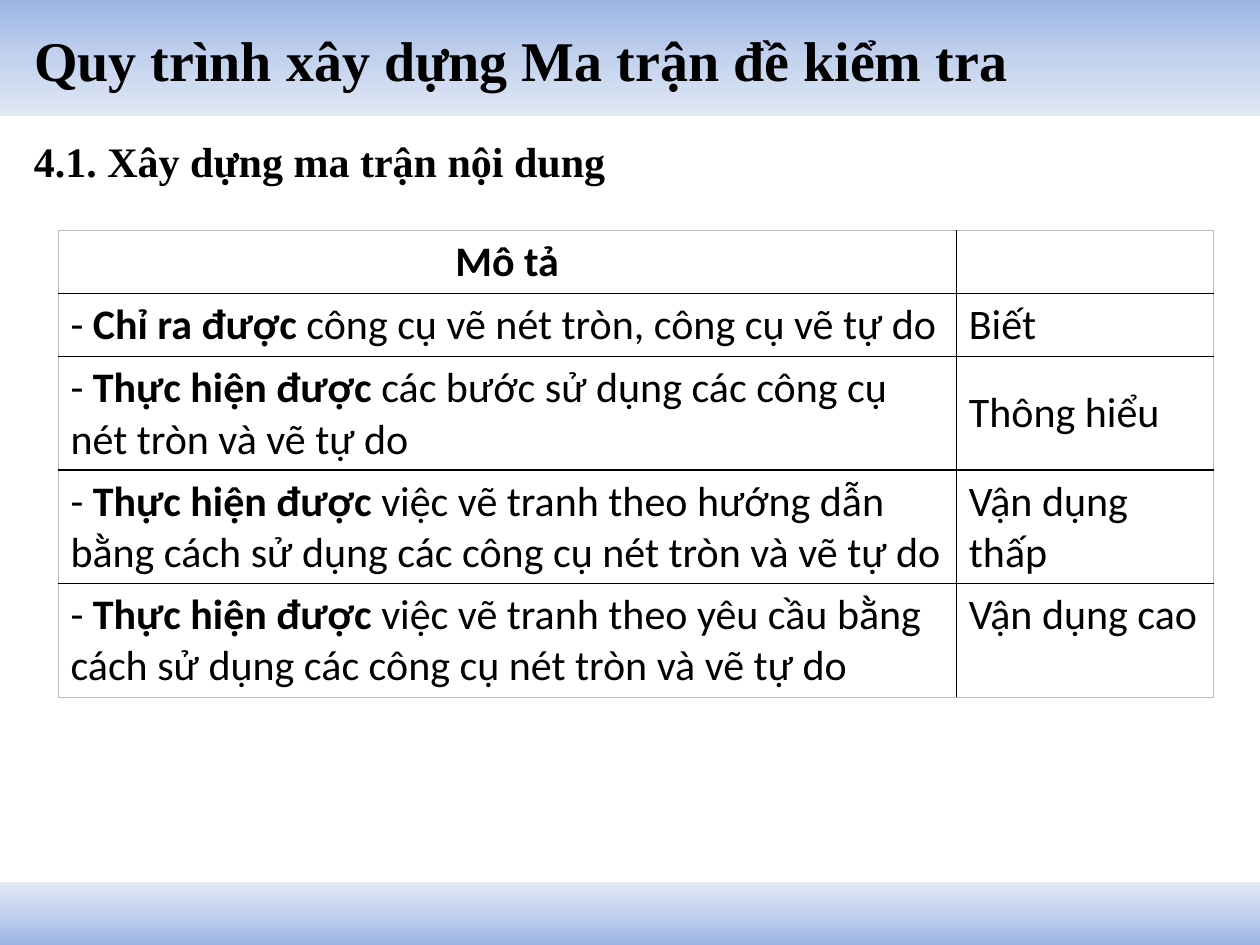
"""Build a slide with the content matrix of a test."""
import copy
import pptx
import pptx.dml.color
import pptx.enum.shapes
import pptx.enum.text
import pptx.oxml
import pptx.oxml.ns
import pptx.util

Inches, Pt = pptx.util.Inches, pptx.util.Pt
RGB = pptx.dml.color.RGBColor.from_string
Align, Anchor = pptx.enum.text.PP_ALIGN, pptx.enum.text.MSO_ANCHOR

THEME = {
    "ink": "000000",
    "edge": "BBBBBB",
    "fade": ["9AB5E4", "C2D1ED", "E1E8F5"],
    "title": {"name": "Times New Roman", "size": Pt(32), "bold": True},
    "head": {"name": "Times New Roman", "size": Pt(24), "bold": True},
    "cell": {"name": "Calibri", "size": Pt(24), "bold": False},
}


def write(para, text, style, **extra):
    run = para.add_run()
    run.text = text
    for key, value in {**THEME[style], **extra}.items():
        setattr(run.font, key, value)
    run.font.color.rgb = RGB(THEME["ink"])


def border(cell, side, color, width):
    cell._tc.get_or_add_tcPr().append(pptx.oxml.parse_xml(
        f'<a:ln{side} {pptx.oxml.ns.nsdecls("a")} w="{Pt(width)}"><a:solidFill>'
        f'<a:srgbClr val="{color}"/></a:solidFill></a:ln{side}>'))


deck = pptx.Presentation()
deck.slide_width, deck.slide_height = Inches(10), Inches(7.5)
slide = deck.slides.add_slide(deck.slide_layouts[5])
shapes = slide.shapes

for top, height, angle in [(0, 0.92, 270), (7, 0.5, 90)]:
    band = shapes.add_shape(pptx.enum.shapes.MSO_SHAPE.RECTANGLE,
                            0, Inches(top), Inches(10), Inches(height))
    band.shadow.inherit = False
    band.line.fill.background()
    band.fill.gradient()
    band.fill.gradient_angle = angle
    first = band._element.spPr.find(".//" + pptx.oxml.ns.qn("a:gs"))
    first.addnext(copy.deepcopy(first))
    for i, stop in enumerate(band.fill.gradient_stops):
        stop.position = i / 2
        stop.color.rgb = RGB(THEME["fade"][i])

title = shapes.title
place = {"left": 0.17, "top": 0.02, "width": 9.67, "height": 0.9}
for key, value in place.items():
    setattr(title, key, Inches(value))
title.text_frame.vertical_anchor = Anchor.MIDDLE
title.text_frame.paragraphs[0].alignment = Align.LEFT
write(title.text_frame.paragraphs[0], "Quy trình xây dựng Ma trận đề kiểm tra", "title")
shapes._spTree.append(title._element)

head = shapes.add_textbox(Inches(0.17), Inches(1.03), Inches(9.75), Inches(0.5))
head.text_frame.word_wrap = True
write(head.text_frame.paragraphs[0], "4.1. Xây dựng ma trận nội dung", "head")

ROWS = [
    ("Chỉ ra được ", "công cụ vẽ nét tròn, công cụ vẽ tự do", "Biết"),
    ("Thực hiện được ", "các bước sử dụng các công cụ nét tròn và vẽ tự do",
     "Thông hiểu"),
    ("Thực hiện được ", "việc vẽ tranh theo hướng dẫn bằng cách sử dụng "
     "các công cụ nét tròn và vẽ tự do", "Vận dụng thấp"),
    ("Thực hiện được ", "việc vẽ tranh theo yêu cầu bằng cách sử dụng "
     "các công cụ nét tròn và vẽ tự do", "Vận dụng cao"),
]
WIDE, HIGH = [7.13, 2.04], [0.5, 0.5, 0.9, 0.9, 0.9]
table = shapes.add_table(len(HIGH), len(WIDE), Inches(0.46), Inches(1.83),
                         Inches(sum(WIDE)), Inches(sum(HIGH))).table
table.first_row = table.horz_banding = False
for col, width in zip(table.columns, WIDE):
    col.width = Inches(width)
for row, height in zip(table.rows, HIGH):
    row.height = Inches(height)

last = len(HIGH) - 1
for r in range(len(HIGH)):
    for c in range(len(WIDE)):
        cell = table.cell(r, c)
        outer = {"L": c == 0, "R": c == 1, "T": r == 0, "B": r == last}
        for side, out in outer.items():
            border(cell, side, THEME["edge" if out else "ink"], 0.5 if out else 1)
        cell.fill.background()

top = table.cell(0, 0).text_frame.paragraphs[0]
top.alignment = Align.CENTER
write(top, "Mô tả", "cell", bold=True)
for r, (verb, task, level) in enumerate(ROWS, 1):
    para = table.cell(r, 0).text_frame.paragraphs[0]
    write(para, "- ", "cell")
    write(para, verb, "cell", bold=True)
    write(para, task, "cell")
    cell = table.cell(r, 1)
    cell.vertical_anchor = Anchor.TOP if r == last else Anchor.MIDDLE
    write(cell.text_frame.paragraphs[0], level, "cell")

deck.save("out.pptx")
